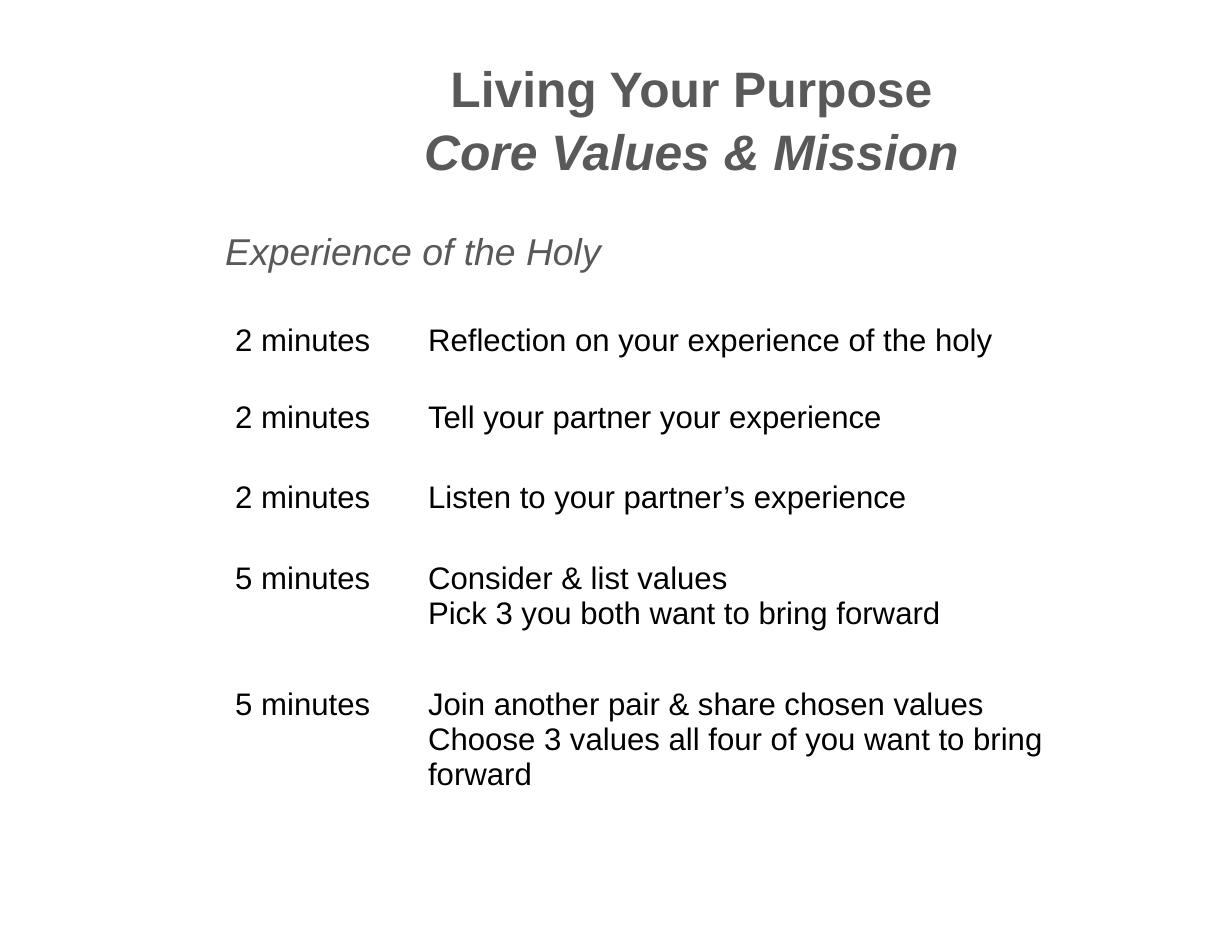
from pptx import Presentation
from pptx import util as u
from pptx.dml.color import RGBColor
from pptx.enum import text

COLORS = {"heading": "595959", "body": "000000"}
ROW_HEIGHTS = [49, 52, 52, 81, 80]
COLUMN_WIDTHS = [124, 427]
AGENDA = [
    ("2 minutes", "Reflection on your experience of the holy"),
    ("2 minutes", "Tell your partner your experience"),
    ("2 minutes", "Listen to your partner’s experience"),
    ("5 minutes", "Consider & list values\nPick 3 you both want to bring forward"),
    ("5 minutes", "Join another pair & share chosen values\n"
                  "Choose 3 values all four of you want to bring forward"),
]


class Handout:
    font_name = "Arial"

    def __init__(self, page):
        self.page = page

    def style(self, para, size, color, bold=False):
        for span in para.runs:
            span.font.name = self.font_name
            span.font.size = u.Pt(size)
            span.font.bold = bold
            span.font.color.rgb = RGBColor.from_string(COLORS[color])

    def heading(self, words, top, height, size, bold=False, centred=False):
        """Add a heading whose last line is italic; \\v breaks a line."""
        box = self.page.shapes.add_textbox(
            u.Pt(137), u.Pt(top), u.Pt(615.5), u.Pt(height))
        frame = box.text_frame
        frame.word_wrap = True
        frame.margin_left = frame.margin_right = u.Pt(7.8)
        frame.margin_top = frame.margin_bottom = u.Pt(4.3)
        frame.text = words
        para = frame.paragraphs[0]
        self.style(para, size, "heading", bold)
        para.runs[-1].font.italic = True
        if centred:
            frame.vertical_anchor = text.MSO_ANCHOR.MIDDLE
            para.alignment = text.PP_ALIGN.CENTER
            para.line_spacing = 1.05

    def agenda(self, rows, left, top):
        table = self.page.shapes.add_table(
            len(rows), len(COLUMN_WIDTHS), u.Pt(left), u.Pt(top),
            u.Pt(sum(COLUMN_WIDTHS)), u.Pt(sum(ROW_HEIGHTS))).table
        table.first_row = table.horz_banding = False
        for column, width in zip(table.columns, COLUMN_WIDTHS):
            column.width = u.Pt(width)
        for row, height, entries in zip(table.rows, ROW_HEIGHTS, rows):
            row.height = u.Pt(height)
            for cell, words in zip(row.cells, entries):
                cell.fill.background()
                cell.text_frame.text = words
                for para in cell.text_frame.paragraphs:
                    self.style(para, 20, "body")


def main():
    deck = Presentation()
    deck.slide_width, deck.slide_height = u.Pt(792), u.Pt(612)
    handout = Handout(deck.slides.add_slide(deck.slide_layouts[6]))
    handout.heading("Living Your Purpose\vCore Values & Mission",
                    24.5, 102, 32, bold=True, centred=True)
    handout.heading("Experience of the Holy", 142.5, 40, 24)
    handout.agenda(AGENDA, 144, 204.5)
    deck.save("out.pptx")


if __name__ == "__main__":
    main()
